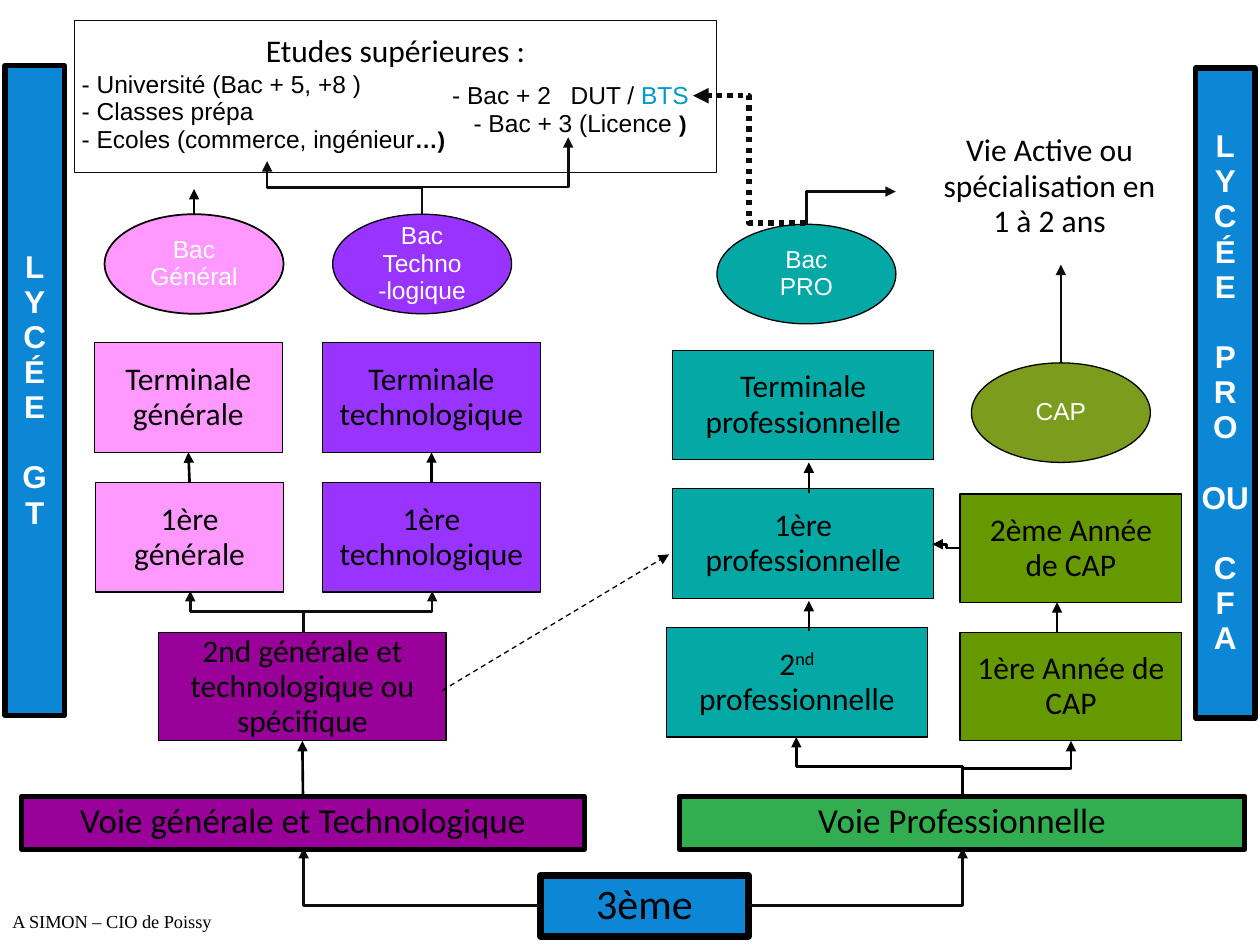
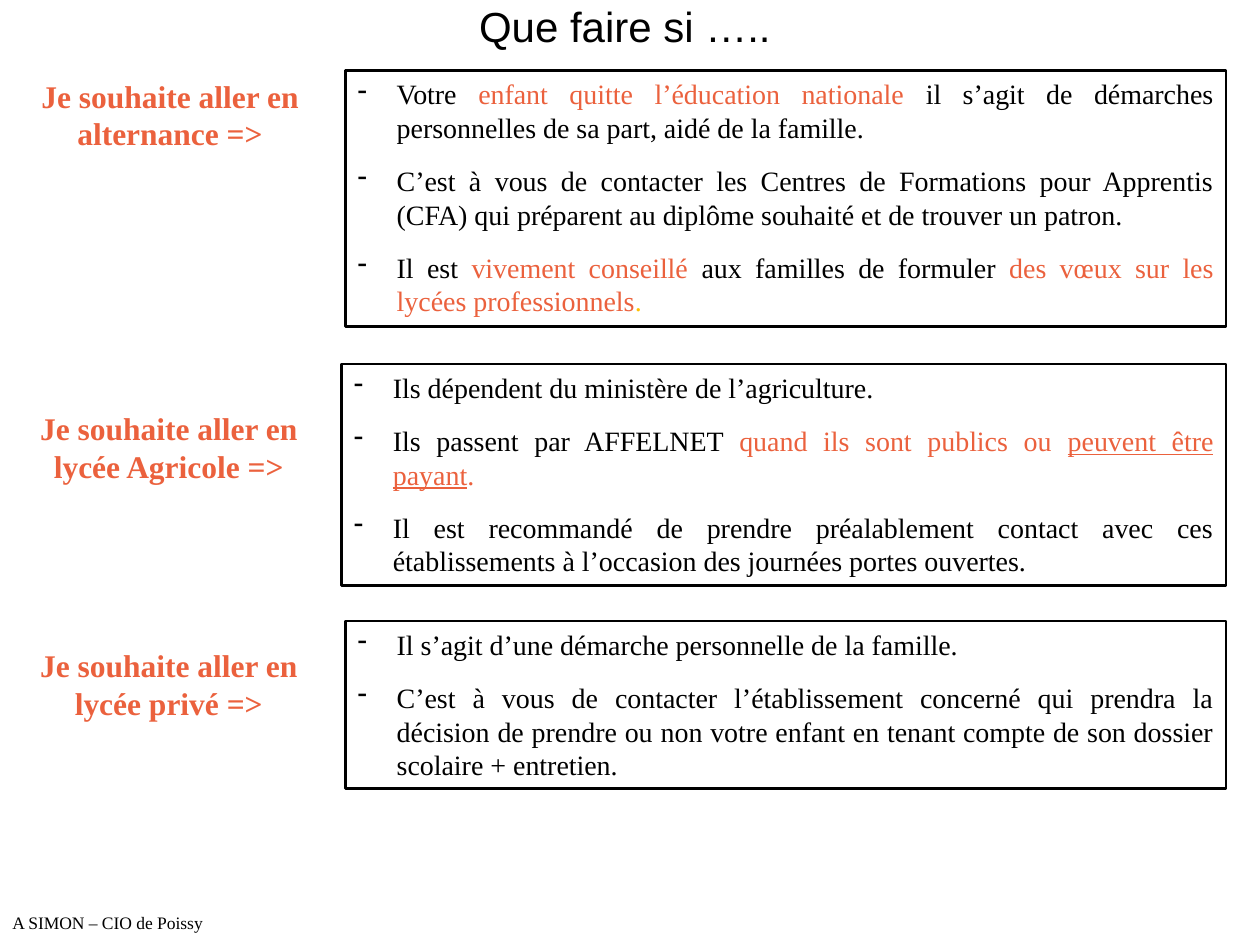
from dataclasses import dataclass
from typing import Optional

from lxml.etree import SubElement
from pptx import Presentation
from pptx.dml.color import RGBColor
from pptx.enum.dml import MSO_LINE
from pptx.enum.shapes import MSO_CONNECTOR, MSO_SHAPE
from pptx.enum.text import MSO_ANCHOR, PP_ALIGN
from pptx.oxml.ns import qn
from pptx.util import Inches, Pt

BLACK, INK, WHITE = "000000", "0D0D0D", "FFFFFF"
BLUE, PURPLE, GREEN, OLIVE, CAP_GREEN = "0B87D6", "990099", "32AE51", "669900", "7C9C1E"
PINK, VIOLET, TEAL, CYAN = "FF99FF", "9933FF", "04A8A4", "0099CC"
ORANGE, GOLD = "EB613D", "FFC000"
SERIF, SANS, BODY = "Times New Roman", "Arial", "Calibri"
FOOTER = "A SIMON – CIO de Poissy"
TIGHT = 0.93
BAC_W, BAC_H = 1.42, 0.79


@dataclass
class Run:
    text: str
    color: Optional[str] = None
    size: Optional[float] = None
    bold: bool = False
    underline: bool = False
    baseline: int = 0


@dataclass
class Box:
    left: float
    top: float
    width: float
    height: float
    text: str | list[Run]
    fill: str
    size: float = 18
    line: float = 0.75
    anchor: MSO_ANCHOR = MSO_ANCHOR.MIDDLE


@dataclass
class Arrow:
    x1: float
    y1: float
    x2: float
    y2: float
    route: str = "straight"
    color: str = BLACK
    width: float = 1.5
    dash: Optional[MSO_LINE] = None
    bend: float = 0.5


@dataclass
class Topic:
    label: str
    label_left: float
    label_top: float
    left: float
    top: float
    width: float
    height: float
    points: list


def rgb(color: str) -> RGBColor:
    return RGBColor.from_string(color)


def add_text(p, text, *, font=BODY, size=18, color=BLACK, bold=False):
    for run in [Run(text)] if isinstance(text, str) else text:
        r = p.add_run()
        r.text = run.text
        f = r.font
        f.name, f.size = font, Pt(run.size or size)
        f.bold, f.underline = bold or run.bold, run.underline
        f.color.rgb = rgb(run.color or color)
        if run.baseline:
            r._r.get_or_add_rPr().set("baseline", str(run.baseline * 1000))


def add_paragraphs(tf, texts, *, align=PP_ALIGN.CENTER, spacing=TIGHT,
                   gap=0, bullet=False, anchor=MSO_ANCHOR.TOP, **style) -> list:
    tf.word_wrap = True
    tf.vertical_anchor = anchor
    made = []
    for i, text in enumerate(texts):
        p = tf.paragraphs[0] if i == 0 else tf.add_paragraph()
        p.alignment, p.line_spacing = align, spacing
        if i:
            p.space_before = Pt(gap)
        if bullet:
            pPr = p._p.get_or_add_pPr()
            pPr.set("marL", str(Inches(0.31)))
            pPr.set("indent", str(-Inches(0.31)))
            SubElement(pPr, qn("a:buChar")).set("char", "-")
        add_text(p, text, **style)
        made.append(p)
    return made


def add_label(s, left, top, width, height, texts, **style) -> list:
    tb = s.shapes.add_textbox(*map(Inches, (left, top, width, height)))
    return add_paragraphs(tb.text_frame, texts, **style)


def add_panel(s, left, top, width, height, *, fill=None, line=0.75,
              color=BLACK, kind=MSO_SHAPE.RECTANGLE):
    sp = s.shapes.add_shape(kind, *map(Inches, (left, top, width, height)))
    sp.shadow.inherit = False
    if fill:
        sp.fill.solid()
        sp.fill.fore_color.rgb = rgb(fill)
    else:
        sp.fill.background()
    sp.line.color.rgb = rgb(color)
    sp.line.width = Pt(line)
    return sp


def add_box(s, b: Box, kind=MSO_SHAPE.RECTANGLE, **style):
    sp = add_panel(s, b.left, b.top, b.width, b.height, fill=b.fill, line=b.line, kind=kind)
    add_paragraphs(sp.text_frame, [b.text], size=b.size, anchor=b.anchor, **style)
    return sp


def add_banner(s, left, top, words):
    sp = add_panel(s, left, top, 0.47, 5.16, fill=BLUE, line=3)
    letters = [letter for word in words for letter in word]
    ps = add_paragraphs(sp.text_frame, letters, font=SANS, color=WHITE, bold=True,
                        anchor=MSO_ANCHOR.MIDDLE)
    sp.text_frame.word_wrap = False
    start = 0
    for word in words[:-1]:
        start += len(word)
        ps[start].space_before = Pt(20)


def add_arrow(s, a: Arrow):
    kind = MSO_CONNECTOR.STRAIGHT if a.route == "straight" else MSO_CONNECTOR.ELBOW
    c = s.shapes.add_connector(kind, *map(Inches, (a.x1, a.y1, a.x2, a.y2)))
    spPr = c._element.spPr
    geom = spPr.find(qn("a:prstGeom"))
    if a.route.endswith("corner"):
        geom.set("prst", "bentConnector2")
    if a.route.startswith("up"):
        run, rise = abs(a.x2 - a.x1), abs(a.y2 - a.y1)
        c.left = Inches((a.x1 + a.x2 - rise) / 2)
        c.top = Inches((a.y1 + a.y2 - run) / 2)
        c.width, c.height = Inches(rise), Inches(run)
        xfrm = spPr.find(qn("a:xfrm"))
        xfrm.set("rot", str(270 * 60000))
        xfrm.set("flipH", "0")
        xfrm.set("flipV", "1" if a.x2 < a.x1 else "0")
    if a.bend != 0.5:
        gd = SubElement(geom.find(qn("a:avLst")), qn("a:gd"))
        gd.set("name", "adj1")
        gd.set("fmla", f"val {round(a.bend * 100000)}")
    c.line.color.rgb = rgb(a.color)
    c.line.width = Pt(a.width)
    if a.dash:
        c.line.dash_style = a.dash
    SubElement(c.line._get_or_add_ln(), qn("a:tailEnd")).set("type", "triangle")
    SubElement(spPr, qn("a:effectLst"))
    return c


def add_footer(s, size, spacing):
    add_label(s, 0, 7.19, 2.47, 0.27, [FOOTER], font=SERIF, size=size,
              spacing=spacing, align=PP_ALIGN.LEFT)


TOP = MSO_ANCHOR.TOP
BOXES = {
    "3e": Box(4.29, 6.95, 1.65, 0.48, "3ème", BLUE, 24, 4, TOP),
    "voie_gt": Box(0.17, 6.32, 4.47, 0.42, "Voie générale et Technologique", PURPLE, 20, 2.75, TOP),
    "voie_pro": Box(5.39, 6.32, 4.49, 0.42, "Voie Professionnelle", GREEN, 20, 3, TOP),
    "2nd_gt": Box(1.26, 5.02, 2.28, 0.86, "2nd générale et technologique ou spécifique", PURPLE),
    "2nd_pro": Box(5.29, 4.98, 2.07, 0.87,
                   [Run("2"), Run("nd", baseline=30), Run(" professionnelle")], TEAL),
    "1re_pro": Box(5.34, 3.88, 2.07, 0.87, "1ère professionnelle", TEAL),
    "term_pro": Box(5.34, 2.78, 2.07, 0.87, "Terminale professionnelle", TEAL),
    "cap_1": Box(7.62, 5.02, 1.76, 0.86, "1ère Année de CAP", OLIVE),
    "cap_2": Box(7.62, 3.92, 1.76, 0.86, "2ème Année de CAP", OLIVE),
    "1re_gen": Box(0.76, 3.83, 1.49, 0.87, "1ère générale", PINK),
    "term_gen": Box(0.75, 2.72, 1.49, 0.87, "Terminale générale", PINK),
    "1re_techno": Box(2.56, 3.83, 1.73, 0.87, "1ère technologique", VIOLET),
    "term_techno": Box(2.56, 2.72, 1.73, 0.87, "Terminale technologique", VIOLET),
}
DIPLOMAS = [
    Box(0.83, 1.7, BAC_W, BAC_H, "Bac Général", PINK, 14, 1),
    Box(2.64, 1.7, BAC_W, BAC_H, "Bac Techno -logique", VIOLET, 14),
    Box(5.69, 1.78, BAC_W, BAC_H, "Bac PRO", TEAL, 14),
    Box(7.71, 2.88, BAC_W, BAC_H, "CAP", CAP_GREEN, 14),
]
JOINED = [("voie_gt", "2nd_gt"), ("1re_gen", "term_gen"), ("1re_techno", "term_techno")]
ARROWS = [
    Arrow(4.29, 7.19, 2.41, 6.73, "corner", INK),
    Arrow(5.94, 7.19, 7.64, 6.73, "corner", INK),
    Arrow(7.64, 6.32, 6.32, 5.85, "up"),
    Arrow(7.64, 6.32, 8.5, 5.88, "up"),
    Arrow(2.41, 5.02, 1.51, 4.69, "up", INK),
    Arrow(2.41, 5.02, 3.43, 4.69, "up", INK),
    Arrow(8.39, 5.02, 8.39, 4.78),
    Arrow(8.42, 2.88, 8.42, 2.1, color=INK),
    Arrow(6.4, 1.78, 7.11, 1.52, "up corner", INK),
    Arrow(1.54, 1.7, 1.54, 1.5),
    Arrow(3.35, 1.68, 4.51, 1.09, "up", INK, bend=0.33),
    Arrow(3.35, 1.7, 2.12, 1.28, "up", INK),
    Arrow(6.39, 1.77, 5.5, 0.76, "across", INK, 3, MSO_LINE.ROUND_DOT),
    Arrow(6.42, 5.01, 6.42, 4.77),
    Arrow(6.42, 3.91, 6.42, 3.67),
    Arrow(7.62, 4.35, 7.4, 4.32, "across"),
    Arrow(3.51, 5.48, 5.31, 4.4, width=0.75, dash=MSO_LINE.DASH),
]
TOPICS = [
    Topic("Je souhaite aller en alternance =>", 0.01, 0.56, 2.74, 0.56, 6.99, 2.03, [
        [Run("Votre "), Run("enfant quitte l’éducation nationale ", ORANGE),
         Run("il s’agit de démarches personnelles de sa part, aidé de la famille.")],
        "C’est à vous de contacter les Centres de Formations pour Apprentis (CFA) "
        "qui préparent au diplôme souhaité et de trouver un patron.",
        [Run("Il est "), Run("vivement conseillé ", ORANGE),
         Run("aux familles de formuler "),
         Run("des vœux sur les lycées professionnels", ORANGE), Run(".", GOLD)],
    ]),
    Topic("Je souhaite aller en lycée Agricole =>", 0, 3.2, 2.71, 2.89, 7.02, 1.76, [
        "Ils dépendent du ministère de l’agriculture.",
        [Run("Ils passent par AFFELNET "), Run("quand ils sont publics ou ", ORANGE),
         Run("peuvent être payant", ORANGE, underline=True), Run(".", ORANGE)],
        "Il est recommandé de prendre préalablement contact avec ces établissements "
        "à l’occasion des journées portes ouvertes.",
    ]),
    Topic("Je souhaite aller en lycée privé =>", 0, 5.08, 2.74, 4.93, 6.99, 1.33, [
        "Il s’agit d’une démarche personnelle de la famille.",
        "C’est à vous de contacter l’établissement concerné qui prendra la décision de "
        "prendre ou non votre enfant en tenant compte de son dossier scolaire + entretien.",
    ]),
]


def build_pathways(s):
    add_banner(s, 0.04, 0.52, ["LYCÉE", "GT"])
    add_banner(s, 9.49, 0.54, ["LYCÉE", "PRO", ["OU"], "CFA"])
    shapes = {key: add_box(s, b) for key, b in BOXES.items()}
    for b in DIPLOMAS:
        add_box(s, b, MSO_SHAPE.OVAL, font=SANS, color=WHITE)

    sp = add_panel(s, 0.59, 0.16, 5.1, 1.21, line=0.5, color=INK)
    sp.text_frame.margin_top = Inches(0.11)
    add_paragraphs(sp.text_frame, ["Etudes supérieures :"])
    add_label(s, 0.55, 0.52, 3.14, 0.76, [
        "- Université (Bac + 5, +8 )",
        "- Classes prépa",
        [Run("- Ecoles (commerce, ingénieur"), Run("…)", size=13, bold=True)],
    ], font=SANS, size=14, align=PP_ALIGN.LEFT)
    short, licence = add_label(s, 3.49, 0.61, 2.2, 0.54, [
        [Run("- Bac + 2\tDUT / "), Run("BTS", CYAN)],
        [Run("- Bac + 3 (Licence "), Run(")", size=13, bold=True)],
    ], font=SANS, size=14, align=PP_ALIGN.LEFT)
    tab = SubElement(SubElement(short._p.get_or_add_pPr(), qn("a:tabLst")), qn("a:tab"))
    tab.set("pos", str(Inches(0.94)))
    tab.set("algn", "l")
    licence._p.get_or_add_pPr().set("marL", str(Inches(0.17)))
    add_label(s, 7.3, 0.89, 2.06, 1.18, ["Vie Active ou spécialisation en", "1 à 2 ans"],
              anchor=MSO_ANCHOR.MIDDLE)

    for a in ARROWS:
        add_arrow(s, a)
    for lower, upper in JOINED:
        c = add_arrow(s, Arrow(0, 1, 0, 0))
        c.begin_connect(shapes[lower], 0)
        c.end_connect(shapes[upper], 2)
    add_footer(s, 10.5, TIGHT)


def build_questions(s):
    add_label(s, 2.94, 0, 4.04, 0.45, ["Que faire si ….."], font=SANS, size=24,
              spacing=1.0, anchor=MSO_ANCHOR.BOTTOM)
    for t in TOPICS:
        sp = add_panel(s, t.left, t.top, t.width, t.height, line=1.5)
        add_paragraphs(sp.text_frame, t.points, font=SERIF, size=16, spacing=1.0,
                       gap=11.2, bullet=True, align=PP_ALIGN.JUSTIFY)
        add_label(s, t.label_left, t.label_top, 2.68, 0.7, [t.label], font=SERIF,
                  color=ORANGE, bold=True, spacing=1.0)
    add_footer(s, 10, 1.0)


def main():
    prs = Presentation()
    prs.slide_width, prs.slide_height = Inches(10), Inches(7.5)
    for build in (build_pathways, build_questions):
        build(prs.slides.add_slide(prs.slide_layouts[6]))
    prs.save("out.pptx")


if __name__ == "__main__":
    main()
